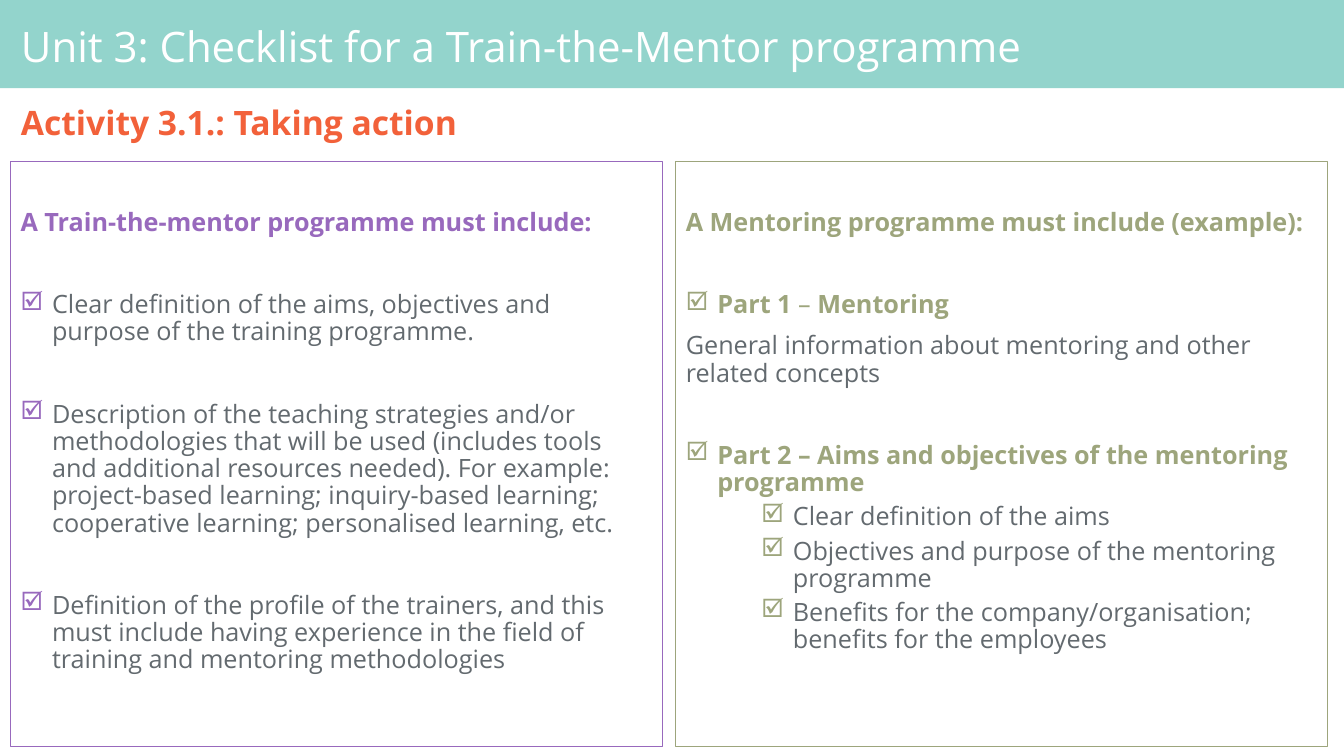
from dataclasses import dataclass

from lxml import etree
from pptx import Presentation
from pptx.dml.color import RGBColor
from pptx.enum.shapes import MSO_SHAPE
from pptx.enum.text import MSO_ANCHOR, PP_ALIGN
from pptx.oxml.ns import qn
from pptx.util import Pt

RECTANGLE = MSO_SHAPE.RECTANGLE
LEFT = PP_ALIGN.LEFT
TOP, MIDDLE = MSO_ANCHOR.TOP, MSO_ANCHOR.MIDDLE


@dataclass(frozen=True)
class Theme:
    """Colours, fonts and type sizes of the slide."""

    font: str = "Open Sans"
    bullet_font: str = "Wingdings"
    band: str = "93D4CC"
    white: str = "FFFFFF"
    orange: str = "F2613A"
    purple: str = "9869BD"
    olive: str = "9DA57C"
    grey: str = "636A6F"
    title_size: int = 30
    subtitle_size: int = 24
    body_size: int = 18


@dataclass(frozen=True)
class LineStyle:
    """Spacing, indent and emphasis of one kind of panel line, in points."""

    before: float = 0
    indent: float = 0
    level: int = 0
    strong: bool = False


THEME = Theme()
CHECK_BOX = "þ"
HANGING = 22.5
SECTION_GAP = 39.3
LINE_SPACING = 0.9

HEADING = LineStyle(strong=True)
ITEM = LineStyle(before=SECTION_GAP, indent=HANGING)
PART = LineStyle(before=SECTION_GAP, indent=HANGING, strong=True)
PLAIN = LineStyle(before=10)
SUBITEM = LineStyle(before=5, indent=76.5, level=1)

TRAINING_LINES = [
    (HEADING, ["A Train-the-mentor programme must include:"]),
    (ITEM, ["Clear definition of the aims, objectives and purpose of the training programme."]),
    (ITEM, ["Description of the teaching strategies and/or methodologies that will be used "
            "(includes tools and additional resources needed). For example: project-based "
            "learning; inquiry-based learning; cooperative learning; personalised learning, etc."]),
    (ITEM, ["Definition of the profile of the trainers, and this must include having "
            "experience in the field of training and mentoring methodologies"]),
]
MENTORING_LINES = [
    (HEADING, ["A Mentoring programme must include (example):"]),
    (PART, ["Part 1 ", "– ", "Mentoring"]),
    (PLAIN, ["General information about mentoring and other related concepts"]),
    (PART, ["Part 2 – Aims and objectives of the mentoring programme"]),
    (SUBITEM, ["Clear definition of the aims"]),
    (SUBITEM, ["Objectives and purpose of the mentoring programme"]),
    (SUBITEM, ["Benefits for the company/organisation; benefits for the employees"]),
]


def set_font(paragraph, size, color, bold):
    """Set the font of a whole paragraph."""
    paragraph.font.name = THEME.font
    paragraph.font.size = Pt(size)
    paragraph.font.bold = bold
    paragraph.font.color.rgb = RGBColor.from_string(color)


def set_frame(text_frame, anchor, top=3.6):
    """Set wrapping, anchor and insets of a text frame."""
    text_frame.word_wrap = True
    text_frame.vertical_anchor = anchor
    text_frame.margin_left = text_frame.margin_right = Pt(7.2)
    text_frame.margin_top = Pt(top)
    text_frame.margin_bottom = Pt(3.6)


def add_bullet(paragraph, indent, color):
    """Give a paragraph a coloured check-box bullet with a hanging indent."""
    properties = paragraph._p.get_or_add_pPr()
    properties.set("marL", str(Pt(indent)))
    properties.set("indent", str(-Pt(HANGING)))
    bullet_color = etree.SubElement(properties, qn("a:buClr"))
    etree.SubElement(bullet_color, qn("a:srgbClr"), val=color)
    etree.SubElement(properties, qn("a:buFont"), typeface=THEME.bullet_font,
                     pitchFamily="2", charset="2")
    etree.SubElement(properties, qn("a:buChar"), char=CHECK_BOX)


def add_band(slide, width):
    """Draw the coloured band behind the title."""
    band = slide.shapes.add_shape(RECTANGLE, 0, 0, width, Pt(63))
    band.shadow.inherit = False
    band.fill.solid()
    band.fill.fore_color.rgb = RGBColor.from_string(THEME.band)
    band.line.fill.background()


def add_heading(slide, text, top, height, size, color, bold):
    """Add a one-line heading across the slide."""
    box = slide.shapes.add_textbox(Pt(7.92), Pt(top), Pt(940.32), Pt(height))
    set_frame(box.text_frame, MIDDLE)
    paragraph = box.text_frame.paragraphs[0]
    paragraph.text = text
    paragraph.line_spacing = LINE_SPACING
    set_font(paragraph, size, color, bold)


def add_panel_line(paragraph, style, pieces, accent):
    """Fill one panel paragraph; every second piece of it is not bold."""
    paragraph.alignment = LEFT
    paragraph.level = style.level
    paragraph.line_spacing = LINE_SPACING
    paragraph.space_before = Pt(style.before)
    if style.indent:
        add_bullet(paragraph, style.indent, accent)
    set_font(paragraph, THEME.body_size, accent if style.strong else THEME.grey, style.strong)
    for index, piece in enumerate(pieces):
        run = paragraph.add_run()
        run.text = piece
        if index % 2:
            run.font.bold = False


def add_panel(slide, left, accent, lines):
    """Add an outlined checklist panel."""
    panel = slide.shapes.add_shape(RECTANGLE, Pt(left), Pt(115.2), Pt(465.4), Pt(418.32))
    panel.shadow.inherit = False
    panel.fill.background()
    panel.line.color.rgb = RGBColor.from_string(accent)
    panel.line.width = Pt(0.75)
    text_frame = panel.text_frame
    set_frame(text_frame, TOP, top=34.6)
    for index, (style, pieces) in enumerate(lines):
        paragraph = text_frame.add_paragraph() if index else text_frame.paragraphs[0]
        add_panel_line(paragraph, style, pieces, accent)


def main():
    """Build the slide and save it."""
    presentation = Presentation()
    presentation.slide_width, presentation.slide_height = Pt(960), Pt(540)
    slide = presentation.slides.add_slide(presentation.slide_layouts[6])
    add_band(slide, presentation.slide_width)
    add_heading(slide, "Unit 3: Checklist for a Train-the-Mentor programme",
                7.1, 56.16, THEME.title_size, THEME.white, False)
    add_heading(slide, "Activity 3.1.: Taking action",
                67.5, 43.2, THEME.subtitle_size, THEME.orange, True)
    add_panel(slide, 7.6, THEME.purple, TRAINING_LINES)
    add_panel(slide, 482.8, THEME.olive, MENTORING_LINES)
    presentation.save("out.pptx")


if __name__ == "__main__":
    main()
